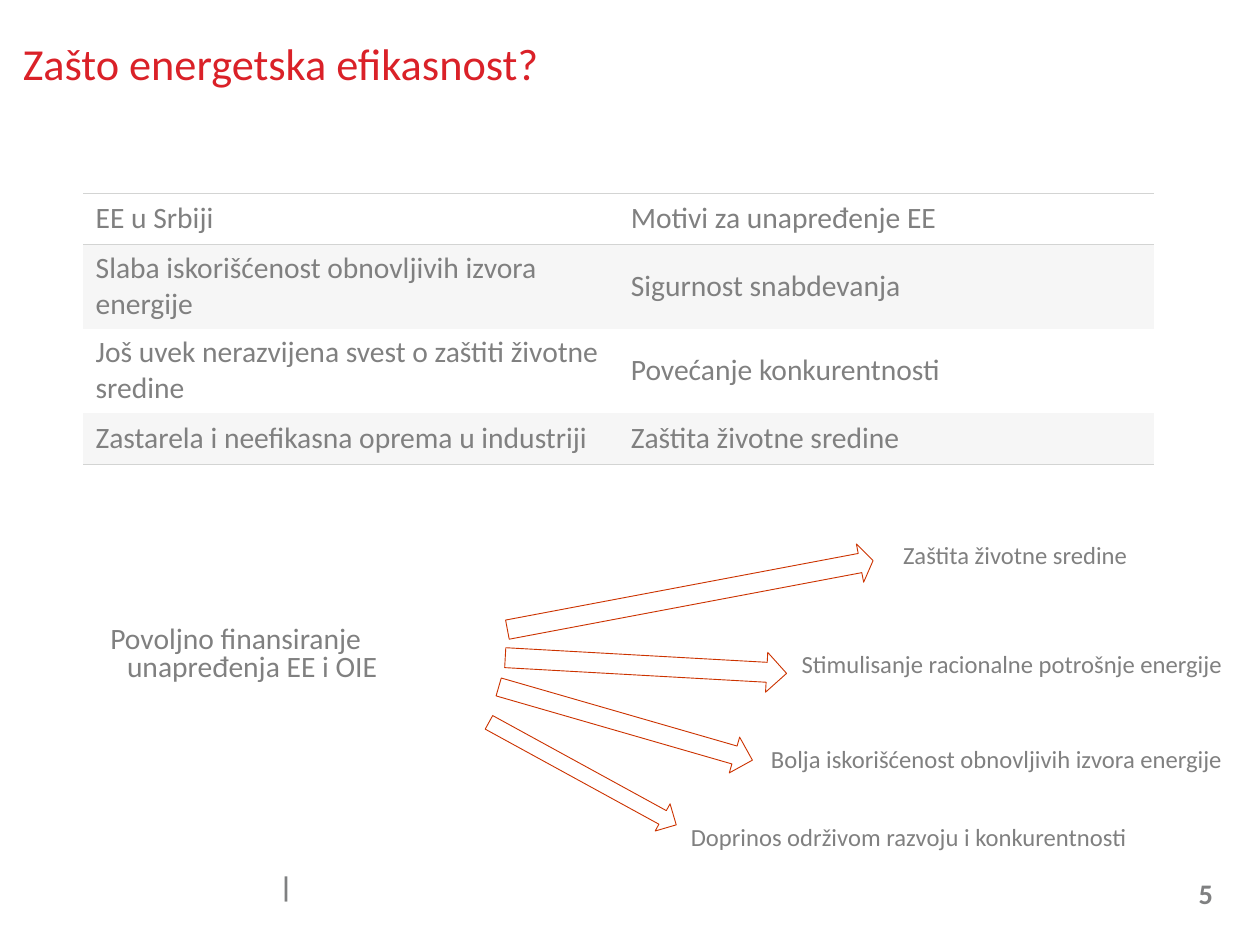
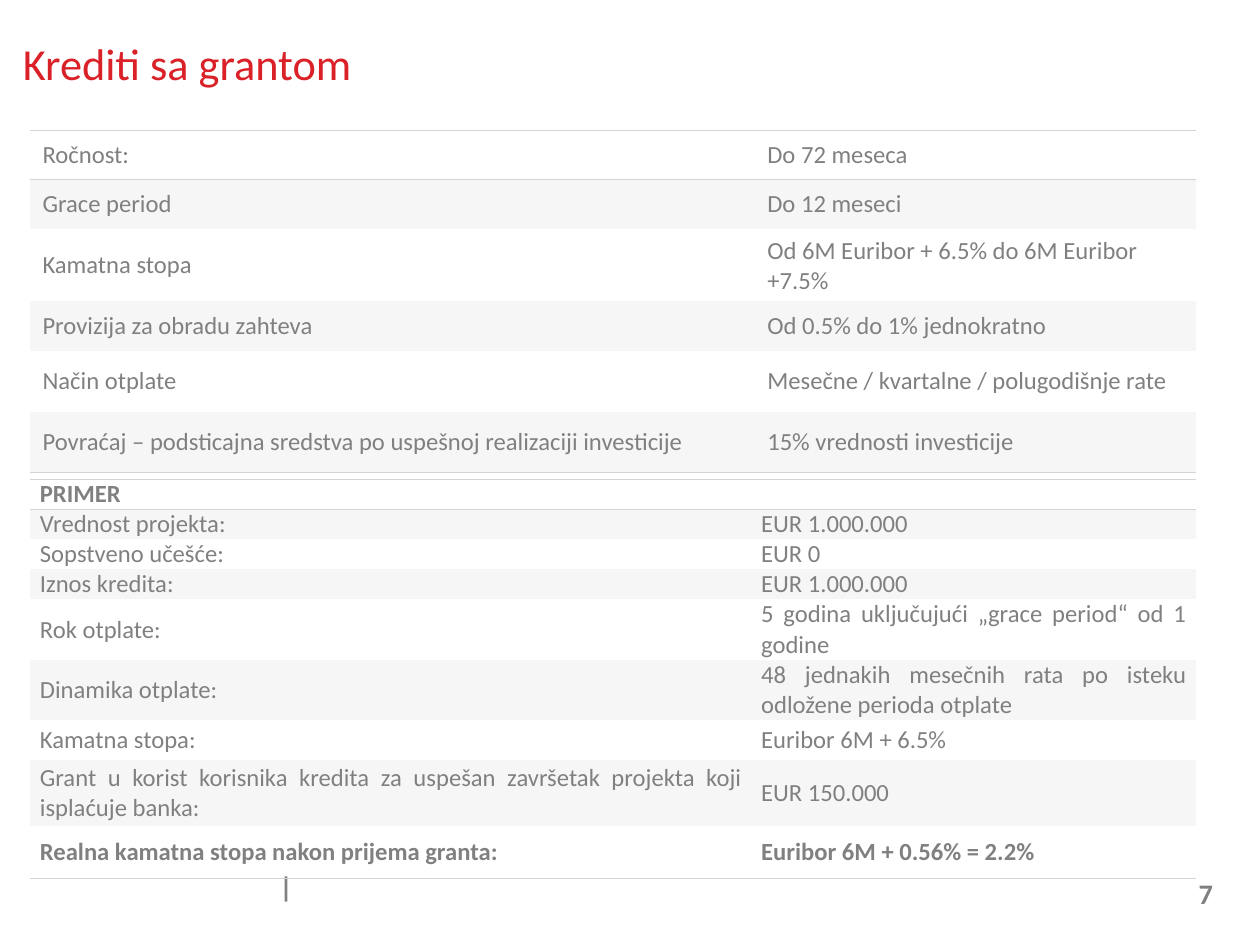
from lxml import etree
from pptx import Presentation
from pptx.dml.color import RGBColor
from pptx.enum import shapes, text as t
from pptx.oxml.ns import qn
from pptx.util import Inches, Pt

RED = RGBColor(0xDA, 0x21, 0x28)
GREY = RGBColor(0x80, 0x80, 0x80)
DARK = RGBColor(0x7F, 0x80, 0x81)
RULE = RGBColor(0xD3, 0xD4, 0xD3)
BAND = RGBColor(0xF6, 0xF6, 0xF6)
RUST = RGBColor(0xCC, 0x33, 0x00)
FONT = "Calibri"
PLAIN = "{2D5ABB26-0587-4C30-8999-92F81FD0307C}"  # table style without lines or fills
LEFT, RIGHT = t.PP_ALIGN.LEFT, t.PP_ALIGN.RIGHT
MID, FULL = t.PP_ALIGN.CENTER, t.PP_ALIGN.JUSTIFY
WIDE = (0.14, 0.07)

MOTIVES = [
    ("EE u Srbiji", "Motivi za unapređenje EE"),
    ("Slaba iskorišćenost obnovljivih izvora energije", "Sigurnost snabdevanja"),
    ("Još uvek nerazvijena svest o zaštiti životne sredine", "Povećanje konkurentnosti"),
    ("Zastarela i neefikasna oprema u industriji", "Zaštita životne sredine"),
]
TERMS = [
    ("Ročnost:", "Do 72 meseca"),
    ("Grace period", "Do 12 meseci"),
    ("Kamatna stopa", "Od 6M Euribor + 6.5% do 6M Euribor +7.5%"),
    ("Provizija za obradu zahteva", "Od 0.5% do 1% jednokratno"),
    ("Način otplate", "Mesečne / kvartalne / polugodišnje rate"),
    ("Povraćaj – podsticajna sredstva po uspešnoj realizaciji investicije",
     "15% vrednosti investicije"),
]
SAMPLE = [
    ("PRIMER", ""),
    ("Vrednost projekta:", "EUR 1.000.000"),
    ("Sopstveno učešće:", "EUR 0"),
    ("Iznos kredita:", "EUR 1.000.000"),
    ("Rok otplate:", "5 godina uključujući „grace period“ od 1 godine"),
    ("Dinamika otplate:", "48 jednakih mesečnih rata po isteku odložene perioda otplate"),
    ("Kamatna stopa:", "Euribor 6M + 6.5%"),
    ("Grant u korist korisnika kredita za uspešan završetak projekta koji isplaćuje banka:",
     "EUR 150.000"),
    ("Realna kamatna stopa nakon prijema granta:", "Euribor 6M + 0.56% = 2.2%"),
]
# label, its box, arrow box, arrow angle, arrow head length
GOALS = [
    ("Zaštita životne sredine", (10.06, 6.11, 2.76, 0.38),
     (5.69, 6.5, 4.2, 0.44), 349.3, 0.34),
    ("Stimulisanje racionalne potrošnje energije", (8.9, 7.34, 4.99, 0.38),
     (5.7, 7.29, 3.18, 0.45), 3.2, 0.5),
    ("Bolja iskorišćenost obnovljivih izvora energije", (8.55, 8.41, 5.34, 0.38),
     (5.57, 7.96, 2.98, 0.42), 16.1, 0.5),
    ("Doprinos održivom razvoju i konkurentnosti", (7.65, 9.3, 5.16, 0.38),
     (5.37, 8.56, 2.41, 0.35), 28.7, 0.5),
]


def write(frame, words, size=20, color=GREY, bold=False, align=LEFT, lead=None, hang=0):
    para = frame.paragraphs[0]
    if hang:
        props = para._p.get_or_add_pPr()
        props.set("marL", str(Inches(hang)))
        props.set("indent", str(-Inches(hang)))
    para.alignment = align
    para.line_spacing = lead
    run = para.add_run()
    run.text = words
    font = run.font
    font.name, font.size, font.bold = FONT, Pt(size), bold
    font.color.rgb = color


def label(slide, box, words, pad=(0.1, 0.05), wrap=True, middle=False, **style):
    frame = slide.shapes.add_textbox(*map(Inches, box)).text_frame
    frame.word_wrap = wrap
    frame.margin_left = frame.margin_right = Inches(pad[0])
    frame.margin_top = frame.margin_bottom = Inches(pad[1])
    frame.vertical_anchor = t.MSO_ANCHOR.MIDDLE if middle else t.MSO_ANCHOR.TOP
    write(frame, words, **style)


def arrow(slide, box, turn, head):
    shape = slide.shapes.add_shape(shapes.MSO_SHAPE.RIGHT_ARROW, *map(Inches, box))
    shape.shadow.inherit = False
    shape.rotation = turn
    shape.adjustments[1] = head
    shape.fill.background()
    shape.line.color.rgb = RUST
    shape.line.width = Pt(0.75)


def rule(cell, sides):
    """Draw thin lines on the given sides of a cell, ahead of its fill."""
    props = cell._tc.get_or_add_tcPr()
    for spot, side in enumerate(sides):
        line = etree.Element(qn("a:ln" + side), w=str(Pt(1)))
        solid = etree.SubElement(line, qn("a:solidFill"))
        etree.SubElement(solid, qn("a:srgbClr"), val=str(RULE))
        props.insert(spot, line)


def grid(slide, spot, cols, rows, data, pad=WIDE, bold=(), **style):
    """Add a table ruled around its head row and below its last row."""
    size = (sum(cols), sum(rows))
    table = slide.shapes.add_table(
        len(rows), len(cols), *map(Inches, spot + size)).table
    table._tbl.tblPr.find(qn("a:tableStyleId")).text = PLAIN
    table.first_row = table.horz_banding = False
    for col, width in zip(table.columns, cols):
        col.width = Inches(width)
    last = len(rows) - 1
    for i, (row, high) in enumerate(zip(table.rows, rows)):
        row.height = Inches(high)
        for cell, words in zip(row.cells, data[i]):
            cell.margin_left = cell.margin_right = Inches(pad[0])
            cell.margin_top = cell.margin_bottom = Inches(pad[1])
            cell.vertical_anchor = t.MSO_ANCHOR.MIDDLE
            if i % 2:
                cell.fill.solid()
                cell.fill.fore_color.rgb = BAND
            else:
                cell.fill.background()
            rule(cell, "TB" if i == 0 else "B" if i == last else "")
            if words:
                write(cell.text_frame, words, bold=i in bold, **style)
    return table


def page(deck, title, number):
    """Add a slide with the shared title, footer bar and page number."""
    slide = deck.slides.add_slide(deck.slide_layouts[6])
    foot = dict(pad=WIDE, middle=True, size=23, color=DARK, bold=True)
    label(slide, (3, 9.76, 0.46, 0.57), "|", align=MID, lead=0.8, **foot)
    label(slide, (0.16, 0.29, 12.68, 0.83), title, middle=True, size=36, color=RED)
    label(slide, (10.51, 9.8, 3.32, 0.57), str(number), align=RIGHT, **foot)
    return slide


def reasons(deck):
    slide = page(deck, "Zašto energetska efikasnost?", 5)
    grid(slide, (0.94, 2.18), (6.04, 6.04), (0.58, 0.95, 0.95, 0.58), MOTIVES, size=24)
    label(slide, (0.26, 7.03, 4.8, 0.76), "Povoljno finansiranje unapređenja EE i OIE",
          size=24, align=MID, lead=0.8, hang=0.37)
    for words, box, shaft, turn, head in GOALS:
        arrow(slide, shaft, turn, head)
        label(slide, box, words, wrap=False, align=RIGHT, lead=0.8)


def loans(deck):
    slide = page(deck, "Krediti sa grantom", 7)
    grid(slide, (0.34, 1.47), (8.18, 4.98), (0.56, 0.56, 0.81, 0.56, 0.69, 0.69), TERMS)
    high = (0.34,) * 4 + (0.68, 0.68, 0.45, 0.75, 0.59)
    table = grid(slide, (0.34, 5.41), (8.14, 5.02), high, SAMPLE,
                 pad=(0.11, 0), bold=(0, len(high) - 1), align=FULL)
    table.cell(0, 0).merge(table.cell(0, 1))


def main():
    deck = Presentation()
    deck.slide_width, deck.slide_height = Inches(14.22), Inches(10.67)
    reasons(deck)
    loans(deck)
    deck.save("out.pptx")


if __name__ == "__main__":
    main()
